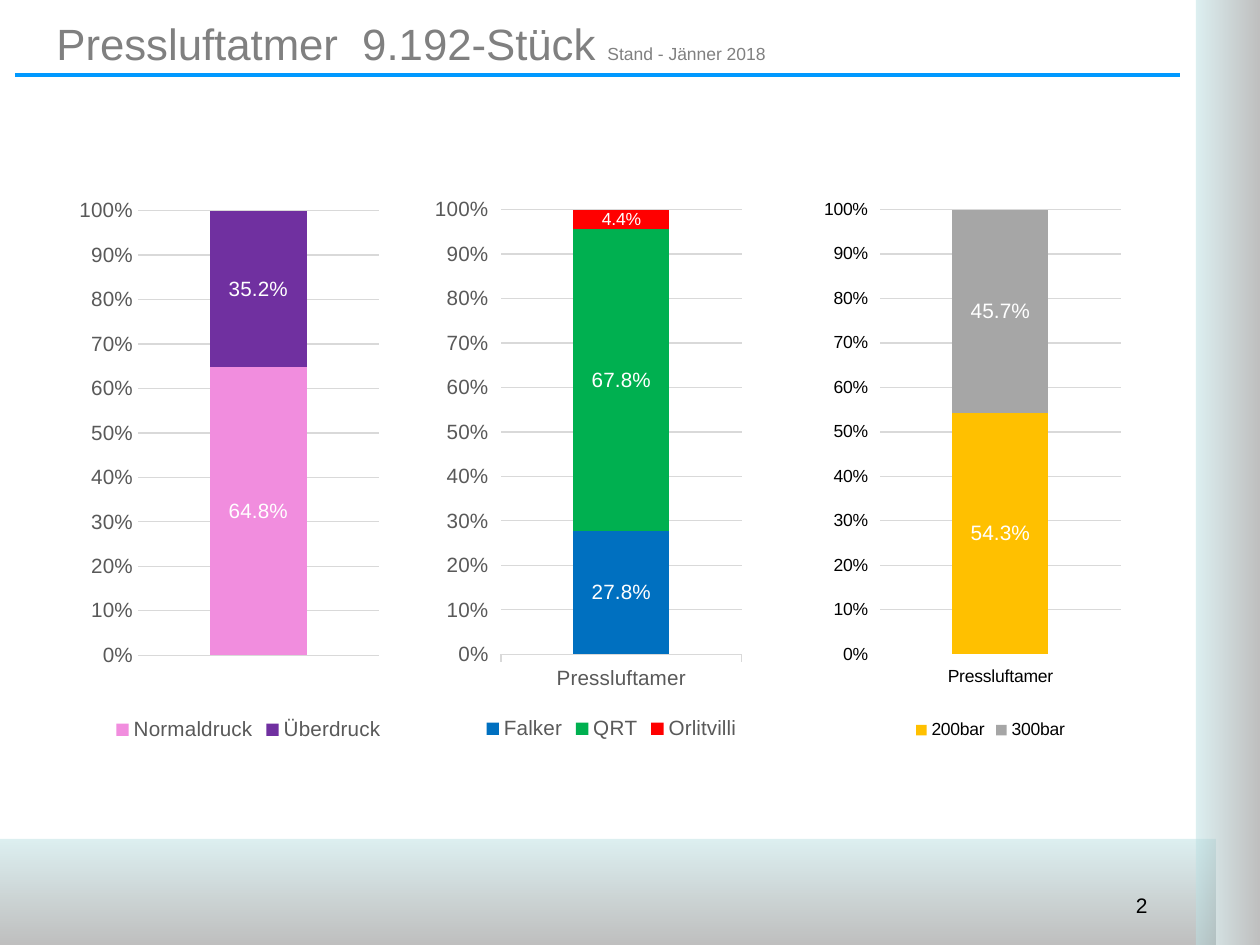
"""Build the slide on breathing apparatus with three stacked 100 % column charts."""
from lxml.etree import SubElement
from pptx import Presentation
from pptx.chart.data import CategoryChartData
from pptx.dml.color import RGBColor
from pptx.enum.chart import XL_CHART_TYPE, XL_LABEL_POSITION, XL_LEGEND_POSITION, XL_TICK_MARK
from pptx.enum.shapes import MSO_CONNECTOR, MSO_SHAPE
from pptx.enum.text import MSO_ANCHOR, PP_ALIGN
from pptx.oxml import parse_xml
from pptx.oxml.ns import nsdecls, qn
from pptx.util import Inches, Pt

WHITE = RGBColor(0xFF, 0xFF, 0xFF)
BLACK = RGBColor(0x00, 0x00, 0x00)
TITLE_GRAY = RGBColor(0x80, 0x80, 0x80)
AXIS_GRAY = RGBColor(0x59, 0x59, 0x59)
GRID_GRAY = RGBColor(0xD9, 0xD9, 0xD9)
PALE_TEAL = RGBColor(0xBB, 0xE0, 0xE3)
RULE_BLUE = RGBColor(0x00, 0x99, 0xFF)
PINK = RGBColor(0xF1, 0x8D, 0xDE)
PURPLE = RGBColor(0x70, 0x30, 0xA0)
BLUE = RGBColor(0x00, 0x70, 0xC0)
GREEN = RGBColor(0x00, 0xB0, 0x50)
RED = RGBColor(0xFF, 0x00, 0x00)
AMBER = RGBColor(0xFF, 0xC0, 0x00)
SILVER = RGBColor(0xA6, 0xA6, 0xA6)
FONT = "Arial"
PLOT_AREA = {"x": 0.196, "y": 0.037, "w": 0.663, "h": 0.8}


def px(*lengths):
    return [round(length * Inches(1) / 126) for length in lengths]


def style(font, size, color):
    font.name = FONT
    font.size = Pt(size)
    font.color.rgb = color


deck = Presentation()
deck.slide_width, deck.slide_height = px(1260, 945)
page = deck.slides.add_slide(deck.slide_layouts[6])

for place, angle in (((0, 839, 1216, 106), 270), ((1196, 0, 64, 945), 0)):
    band = page.shapes.add_shape(MSO_SHAPE.RECTANGLE, *px(*place))
    band.shadow.inherit = False
    band.line.fill.background()
    band.fill.gradient()
    band.fill.gradient_angle = angle
    for stop, color in zip(band.fill.gradient_stops, (PALE_TEAL, TITLE_GRAY)):
        stop.color.rgb = color
    for tint in band.fill._xPr.iter(qn("a:srgbClr")):
        SubElement(tint, qn("a:alpha"), val="49000")

number_box = page.shapes.add_textbox(*px(1071, 886, 89, 39))
number_box.text_frame.word_wrap = True
para = number_box.text_frame.paragraphs[0]
para.text = "2"
para.alignment = PP_ALIGN.RIGHT
style(para.font, 12, BLACK)

title_box = page.shapes.add_textbox(*px(44, 0, 1090, 86))
title_box.text_frame.word_wrap = True
title_box.text_frame.vertical_anchor = MSO_ANCHOR.MIDDLE
para = title_box.text_frame.paragraphs[0]
for text, size in (("Pressluftatmer  9.192-Stück ", 25), ("Stand - Jänner 2018", 10)):
    span = para.add_run()
    span.text = text
    style(span.font, size, TITLE_GRAY)

rule = page.shapes.add_connector(MSO_CONNECTOR.STRAIGHT, *px(15, 75, 1180, 75))
rule.line.color.rgb = RULE_BLUE
rule.line.width = Pt(2)
SubElement(rule._element.spPr, qn("a:effectLst"))

NONE, OUTSIDE = XL_TICK_MARK.NONE, XL_TICK_MARK.OUTSIDE
charts = [
    (67, 190, "1", False, NONE, None, 11.8, AXIS_GRAY,
     [("Normaldruck", 0.648, PINK, 11.8), ("Überdruck", 0.352, PURPLE, 11.8)]),
    (430, 189, "Pressluftamer", True, OUTSIDE, GRID_GRAY, 11.8, AXIS_GRAY,
     [("Falker", 0.278, BLUE, 11.8), ("QRT", 0.678, GREEN, 11.8),
      ("Orlitvilli", 0.044, RED, 10)]),
    (809, 189, "Pressluftamer", True, OUTSIDE, WHITE, 10, BLACK,
     [("200bar", 0.543, AMBER, 11.9), ("300bar", 0.457, SILVER, 11.9)]),
]
for left, top, category, axis_shown, tick, axis_line, size, color, parts in charts:
    data = CategoryChartData(number_format="0.0%")
    data.categories = [category]
    for name, share, _, _ in parts:
        data.add_series(name, [share])
    chart = page.shapes.add_chart(
        XL_CHART_TYPE.COLUMN_STACKED_100, *px(left, top, 363, 556), data).chart
    style(chart.font, size, color)
    chart.has_title = False
    chart.has_legend = True
    chart.legend.position = XL_LEGEND_POSITION.BOTTOM
    chart.legend.include_in_layout = False
    style(chart.legend.font, size, color)

    plot = chart.plots[0]
    plot.gap_width = 150
    plot.overlap = 100
    plot.vary_by_categories = False
    for series, (_, _, fill, label_size) in zip(plot.series, parts):
        series.format.fill.solid()
        series.format.fill.fore_color.rgb = fill
        labels = series.data_labels
        labels.show_value = True
        labels.number_format = "0.0%"
        labels.number_format_is_linked = False
        labels.position = XL_LABEL_POSITION.CENTER
        style(labels.font, label_size, WHITE)

    category_axis, value_axis = chart.category_axis, chart.value_axis
    category_axis.visible = axis_shown
    category_axis.major_tick_mark = tick
    category_axis.has_major_gridlines = False
    if axis_line:
        category_axis.format.line.color.rgb = axis_line
        category_axis.format.line.width = Pt(0.75)
    style(category_axis.tick_labels.font, size, color)

    value_axis.minimum_scale, value_axis.maximum_scale = 0, 1
    value_axis.major_unit = 0.1
    value_axis.major_tick_mark = tick
    value_axis.tick_labels.number_format = "0%"
    value_axis.tick_labels.number_format_is_linked = False
    style(value_axis.tick_labels.font, size, color)
    value_axis.format.line.fill.background()
    grid = value_axis.major_gridlines.format.line
    grid.color.rgb = GRID_GRAY
    grid.width = Pt(0.75)

    plot_area = chart._chartSpace.chart.plotArea
    for old_layout in plot_area.findall(qn("c:layout")):
        plot_area.remove(old_layout)
    layout = parse_xml(f"<c:layout {nsdecls('c')}><c:manualLayout/></c:layout>")
    SubElement(layout[0], qn("c:layoutTarget"), val="inner")
    for side in "xy":
        SubElement(layout[0], qn(f"c:{side}Mode"), val="edge")
    for side, part in PLOT_AREA.items():
        SubElement(layout[0], qn(f"c:{side}"), val=str(part))
    plot_area.insert(0, layout)

deck.save("out.pptx")
